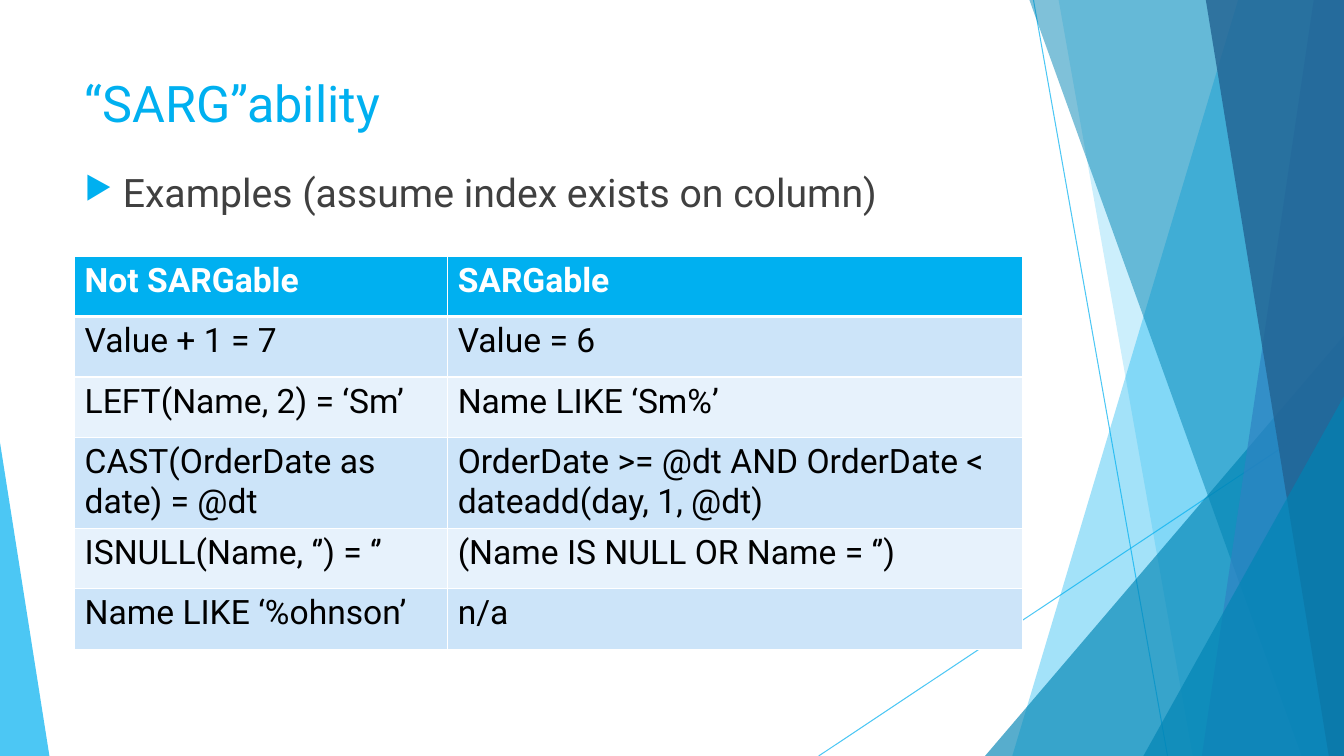
from dataclasses import dataclass

from lxml import etree
from pptx import Presentation
from pptx.dml.color import RGBColor
from pptx.enum.shapes import MSO_CONNECTOR, MSO_SHAPE
from pptx.oxml.ns import qn
from pptx.util import Inches, Pt

STRAIGHT = MSO_CONNECTOR.STRAIGHT
TRIANGLE = MSO_SHAPE.ISOSCELES_TRIANGLE


@dataclass(frozen=True)
class Theme:
    font: str = "Roboto"
    sky: str = "00B0F0"
    teal: str = "0084B4"
    blue: str = "2E83C3"
    navy: str = "226292"
    white: str = "FFFFFF"
    black: str = "000000"
    gray: str = "404040"
    odd: str = "CCE4F9"
    even: str = "E7F2FC"
    title: int = 36
    body: int = 28
    cell: int = 24


@dataclass(frozen=True)
class Ray:
    start: tuple[float, float]
    end: tuple[float, float]


@dataclass(frozen=True)
class Band:
    top: float
    base: float
    color: str
    alpha: int


@dataclass(frozen=True)
class Wedge:
    left: float
    top: float
    width: float
    height: float
    tip: float
    color: str
    alpha: int


THEME = Theme()
WIDTH, HEIGHT = 13.33, 7.5
LEFT, SPAN = 0.74, 9.4
COLUMNS = (3.7, 5.7)
HEIGHTS = (0.6, 0.6, 0.6, 0.72, 0.6, 0.6)

DECOR = (
    Ray((10.25, 0), (11.58, HEIGHT)),
    Ray((WIDTH, 4.03), (8.12, HEIGHT)),
    Band(12.28, 10.04, THEME.sky, 36),
    Band(10.5, 11.83, THEME.sky, 20),
    Wedge(9.77, 3.33, 3.56, 4.17, 1, THEME.teal, 66),
    Band(10.21, 12.91, THEME.teal, 50),
    Band(13.03, 11.92, THEME.blue, 70),
    Band(11.96, 13.18, THEME.navy, 80),
    Wedge(11.34, 3.93, 1.99, 3.57, 1, THEME.teal, 66),
    Wedge(0, 4.39, 0.49, 3.11, 0, THEME.sky, 70),
)

ROWS = (
    ("Not SARGable", "SARGable"),
    ("Value + 1 = 7", "Value = 6"),
    ("LEFT(Name, 2) = ‘Sm’", "Name LIKE ‘Sm%’"),
    ("CAST(OrderDate as date) = @dt",
     "OrderDate >= @dt AND OrderDate < dateadd(day, 1, @dt)"),
    ("ISNULL(Name, ‘’) = ‘’", "(Name IS NULL OR Name = ‘’)"),
    ("Name LIKE ‘%ohnson’", "n/a"),
)


def add_node(parent, tag: str, **values: str):
    return etree.SubElement(parent, qn(tag), values)


def fade(shape, alpha: int) -> None:
    for color in shape._element.spPr.iter(qn("a:srgbClr")):
        add_node(color, "a:alpha", val=str(alpha * 1000))


def paint(shape, color: str, alpha: int) -> None:
    shape.shadow.inherit = False
    shape.fill.solid()
    shape.fill.fore_color.rgb = RGBColor.from_string(color)
    shape.line.fill.background()
    fade(shape, alpha)


def draw_ray(slide, ray: Ray) -> None:
    ends = (Inches(value) for value in ray.start + ray.end)
    line = slide.shapes.add_connector(STRAIGHT, *ends)
    line.line.color.rgb = RGBColor.from_string(THEME.sky)
    line.line.width = Pt(0.75)
    fade(line, 70)
    add_node(line._element.spPr, "a:effectLst")


def draw_band(slide, band: Band) -> None:
    top, base, edge, foot = map(Inches, (band.top, band.base, WIDTH, HEIGHT))
    path = slide.shapes.build_freeform(top, 0)
    path.add_line_segments(((edge, 0), (edge, foot), (base, foot)))
    paint(path.convert_to_shape(), band.color, band.alpha)


def draw_wedge(slide, wedge: Wedge) -> None:
    box = map(Inches, (wedge.left, wedge.top, wedge.width, wedge.height))
    shape = slide.shapes.add_shape(TRIANGLE, *box)
    shape.adjustments[0] = wedge.tip
    paint(shape, wedge.color, wedge.alpha)


def write(frame, text: str, size: int, color: str, bold: bool = False):
    frame.word_wrap = True
    para = frame.paragraphs[0]
    run = para.add_run()
    run.text = text
    style = {"name": THEME.font, "size": Pt(size), "bold": bold}
    for key, value in style.items():
        setattr(run.font, key, value)
    run.font.color.rgb = RGBColor.from_string(color)
    return para


def add_text(slide, top: float, height: float, text: str, size: int, color: str):
    box = map(Inches, (LEFT, top, SPAN, height))
    return write(slide.shapes.add_textbox(*box).text_frame, text, size, color)


def add_bullet(para) -> None:
    para.space_before = Pt(10)
    props = para._p.get_or_add_pPr()
    indent = Inches(0.38)
    for key, value in {"marL": indent, "indent": -indent}.items():
        props.set(key, str(value))
    add_node(add_node(props, "a:buClr"), "a:srgbClr", val=THEME.sky)
    add_node(props, "a:buSzPct", val="80000")
    add_node(props, "a:buChar", char="▶")


def add_edges(cell, widths: dict[str, int]) -> None:
    props = cell._tc.get_or_add_tcPr()
    for place, (side, width) in enumerate(widths.items()):
        edge = add_node(props, f"a:ln{side}", w=str(Pt(width)))
        add_node(add_node(edge, "a:solidFill"), "a:srgbClr", val=THEME.white)
        props.insert(place, edge)


def draw_table(slide) -> None:
    box = map(Inches, (LEFT, 2.54, SPAN, sum(HEIGHTS)))
    table = slide.shapes.add_table(len(ROWS), len(COLUMNS), *box).table
    for column, width in zip(table.columns, COLUMNS):
        column.width = Inches(width)
    for index, (row, height) in enumerate(zip(table.rows, HEIGHTS)):
        row.height = Inches(height)
        head = index == 0
        fill = THEME.sky if head else THEME.odd if index % 2 else THEME.even
        color = THEME.white if head else THEME.black
        edges = {"L": 1, "R": 1, "T": 3 if index == 1 else 1, "B": 3 if head else 1}
        for cell, text in zip(row.cells, ROWS[index]):
            cell.fill.solid()
            cell.fill.fore_color.rgb = RGBColor.from_string(fill)
            write(cell.text_frame, text, THEME.cell, color, head)
            add_edges(cell, edges)


def main() -> None:
    deck = Presentation()
    deck.slide_width, deck.slide_height = Inches(WIDTH), Inches(HEIGHT)
    slide = deck.slides.add_slide(deck.slide_layouts[6])
    draw = {Ray: draw_ray, Band: draw_band, Wedge: draw_wedge}
    for item in DECOR:
        draw[type(item)](slide, item)
    add_text(slide, 0.67, 0.9, "“SARG”ability", THEME.title, THEME.sky)
    add_bullet(add_text(slide, 1.62, 0.8, "Examples (assume index exists on column)",
                        THEME.body, THEME.gray))
    draw_table(slide)
    deck.save("out.pptx")


if __name__ == "__main__":
    main()
